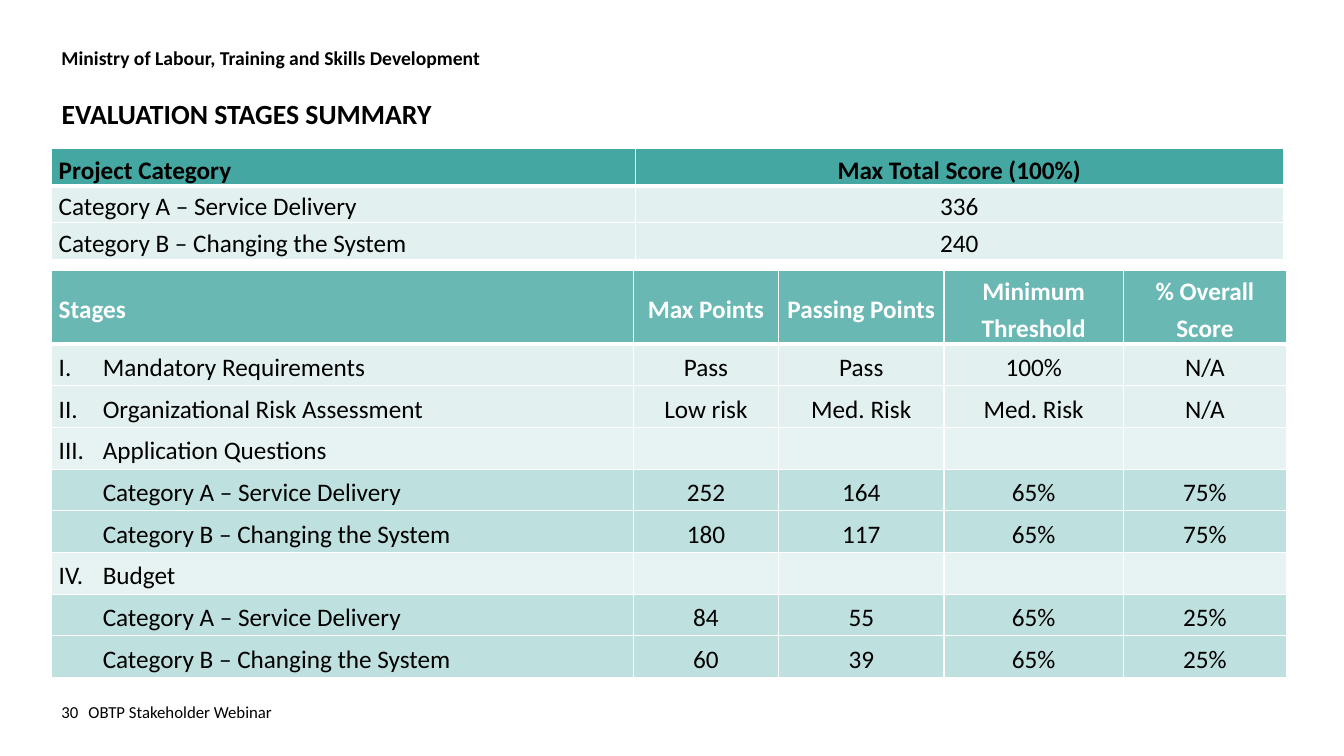
import pptx
import pptx.dml.color
import pptx.enum.text
import pptx.oxml.ns
import pptx.util
from lxml import etree
from pptx.util import Cm

FONT = "Calibri"
BLACK, WHITE = "000000", "FFFFFF"
TEAL, PALE, SOFT = "44A7A2", "E2F1F0", "BEE0DE"
LEFT = Cm(1.3)
NUMBER_INDENT = Cm(1.11)
ALIGN = pptx.enum.text.PP_ALIGN
ANCHOR = pptx.enum.text.MSO_ANCHOR

CATEGORY_A = "Category A – Service Delivery"
CATEGORY_B = "Category B – Changing the System"
SCORES = [
    ["Project Category", "Max Total Score (100%)"],
    [CATEGORY_A, "336"],
    [CATEGORY_B, "240"],
]
STAGES = [
    ["Stages", "Max Points", "Passing Points", "Minimum Threshold", "% Overall Score"],
    ["Mandatory Requirements", "Pass", "Pass", "100%", "N/A"],
    ["Organizational Risk Assessment", "Low risk", "Med. Risk", "Med. Risk", "N/A"],
    ["Application Questions", "", "", "", ""],
    [CATEGORY_A, "252", "164", "65%", "75%"],
    [CATEGORY_B, "180", "117", "65%", "75%"],
    ["Budget", "", "", "", ""],
    [CATEGORY_A, "84", "55", "65%", "25%"],
    [CATEGORY_B, "60", "39", "65%", "25%"],
]


def rgb(color):
    return pptx.dml.color.RGBColor.from_string(color)


def apply(target, values):
    for name, value in values.items():
        setattr(target, name, value)


def add_child(parent, tag, **attributes):
    return etree.SubElement(parent, pptx.oxml.ns.qn(tag), attributes)


def write(paragraph, text, size, color=BLACK, bold=False):
    run = paragraph.add_run()
    run.text = text
    apply(run.font, {"name": FONT, "size": pptx.util.Pt(size), "bold": bold})
    run.font.color.rgb = rgb(color)


def format_frame(frame, anchor):
    apply(frame, {"word_wrap": True, "vertical_anchor": anchor,
                  "auto_size": pptx.enum.text.MSO_AUTO_SIZE.NONE})


def add_text(slide, text, box, size, bold=False, anchor=ANCHOR.TOP):
    frame = slide.shapes.add_textbox(*box).text_frame
    format_frame(frame, anchor)
    write(frame.paragraphs[0], text, size, bold=bold)


def set_title(slide, text):
    title = slide.shapes.title
    apply(title, {"left": LEFT, "top": Cm(2.41), "width": Cm(27.41), "height": Cm(1.02)})
    format_frame(title.text_frame, ANCHOR.TOP)
    paragraph = title.text_frame.paragraphs[0]
    apply(paragraph, {"alignment": ALIGN.LEFT, "line_spacing": 0.9})
    write(paragraph, text, 19.8, bold=True)


def set_borders(cell, top, bottom):
    """Draw white cell borders; top and bottom are widths in points."""
    properties = cell._tc.get_or_add_tcPr()
    for side, width in (("L", 1), ("R", 1), ("T", top), ("B", bottom)):
        line = add_child(properties, f"a:ln{side}", w=str(pptx.util.Pt(width)))
        add_child(add_child(line, "a:solidFill"), "a:srgbClr", val=WHITE)


def set_fill(cell, color, opacity=100):
    cell.fill.solid()
    cell.fill.fore_color.rgb = rgb(color)
    if opacity < 100:
        for node in cell._tc.tcPr.findall(pptx.oxml.ns.qn("a:solidFill")):
            add_child(node[0], "a:alpha", val=str(opacity * 1000))


def indent(paragraph, number=None):
    """Indent a paragraph, hanging it behind a Roman numeral if a number is given."""
    properties = paragraph._p.get_or_add_pPr()
    properties.set("marL", str(NUMBER_INDENT))
    properties.set("indent", str(-NUMBER_INDENT if number else 0))
    if number:
        add_child(properties, "a:buFont", typeface="+mj-lt")
        add_child(properties, "a:buAutoNum", type="romanUcPeriod", startAt=str(number))


def add_table(slide, rows, top, widths, heights, header_color, row_fill):
    """Add a table and return it; row_fill maps a row number to colour and opacity."""
    frame = slide.shapes.add_table(len(rows), len(widths), LEFT, top, sum(widths), sum(heights))
    table = frame.table
    table.horz_banding = False
    for column, width in zip(table.columns, widths):
        column.width = width
    for row_index, texts in enumerate(rows):
        table.rows[row_index].height = heights[row_index]
        header = row_index == 0
        for column_index, text in enumerate(texts):
            cell = table.cell(row_index, column_index)
            apply(cell, {"margin_left": Cm(0.18), "margin_right": Cm(0.18), "margin_top": 0,
                         "margin_bottom": 0, "vertical_anchor": ANCHOR.MIDDLE})
            set_borders(cell, 3 if row_index == 1 else 1, 3 if header else 1)
            set_fill(cell, *row_fill(row_index))
            paragraph = cell.text_frame.paragraphs[0]
            apply(paragraph, {"line_spacing": 1.2,
                              "alignment": ALIGN.CENTER if column_index else ALIGN.LEFT})
            if text:
                write(paragraph, text, 18, header_color if header else BLACK, header)
            else:
                paragraph.font.size = pptx.util.Pt(18)
    return table


def score_fill(row):
    return (PALE if row else TEAL, 100)


def stage_fill(row):
    if row == 0:
        return TEAL, 80
    if STAGES[row][0] in (CATEGORY_A, CATEGORY_B):
        return SOFT, 100
    return PALE, 100 if STAGES[row][1] else 80


def number_stages(table):
    number = 0
    for row, texts in enumerate(STAGES[1:], start=1):
        paragraph = table.cell(row, 0).text_frame.paragraphs[0]
        if texts[0] in (CATEGORY_A, CATEGORY_B):
            indent(paragraph)
        else:
            number += 1
            indent(paragraph, number)


def main():
    presentation = pptx.Presentation()
    presentation.slide_width, presentation.slide_height = Cm(33.87), Cm(19.05)
    slide = presentation.slides.add_slide(presentation.slide_layouts[5])

    add_text(slide, "Ministry of Labour, Training and Skills Development",
             (LEFT, Cm(1.02), Cm(24.71), Cm(0.86)), 14, bold=True)
    set_title(slide, "EVALUATION STAGES SUMMARY")
    add_table(slide, SCORES, Cm(3.75), [Cm(14.71), Cm(16.33)], [Cm(0.92)] * 3,
              BLACK, score_fill)
    stages = add_table(slide, STAGES, Cm(6.81),
                       [Cm(width) for width in (14.66, 3.66, 4.17, 4.52, 4.11)],
                       [Cm(1.68)] + [Cm(1.05)] * 8, WHITE, stage_fill)
    number_stages(stages)
    for text, left, width in (("30", LEFT, Cm(1.9)),
                              ("OBTP Stakeholder Webinar", Cm(1.98), Cm(10.31))):
        add_text(slide, text, (left, Cm(17.42), width, Cm(1.02)), 12, anchor=ANCHOR.MIDDLE)

    presentation.save("out.pptx")


if __name__ == "__main__":
    main()
